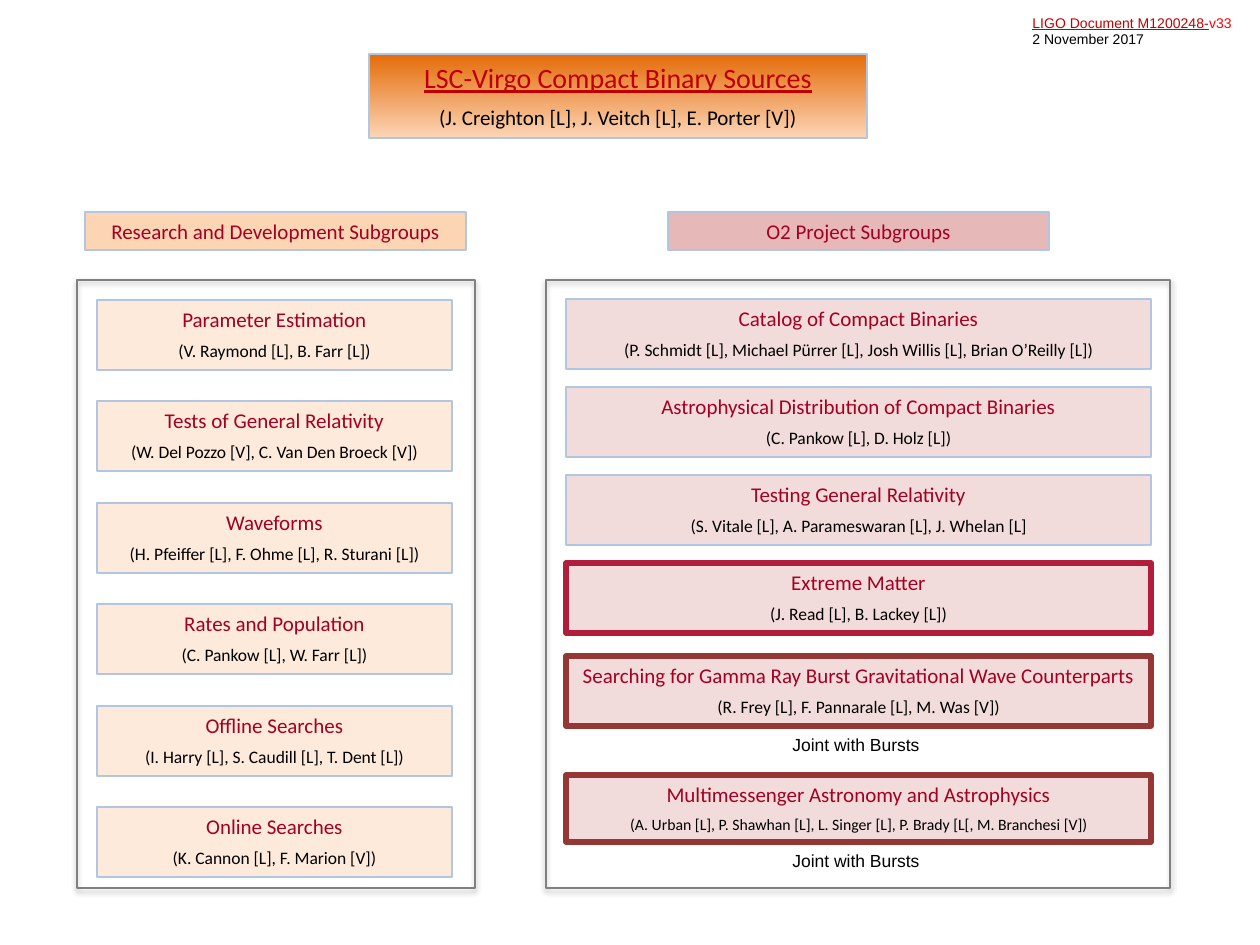
from lxml import etree
from pptx import Presentation
from pptx.dml.color import RGBColor
from pptx.enum.shapes import MSO_SHAPE
from pptx.enum.text import MSO_ANCHOR, PP_ALIGN
from pptx.oxml.ns import qn
from pptx.util import Emu, Pt

RECTANGLE = MSO_SHAPE.RECTANGLE
TOP = MSO_ANCHOR.TOP
LEFT, CENTER = PP_ALIGN.LEFT, PP_ALIGN.CENTER

BLACK = RGBColor(0x00, 0x00, 0x00)
GRAY = RGBColor(0x80, 0x80, 0x80)
RED = RGBColor(0xFF, 0x00, 0x00)
DARK_RED = RGBColor(0xC0, 0x00, 0x00)
CRIMSON = RGBColor(0xA5, 0x00, 0x21)
PALE_BLUE = RGBColor(0xB0, 0xC6, 0xE1)
ORANGE = RGBColor(0xE4, 0x6C, 0x0A)
PEACH = RGBColor(0xFC, 0xD5, 0xB5)
PALE_PEACH = RGBColor(0xFD, 0xEA, 0xDA)
ROSE = RGBColor(0xE6, 0xB9, 0xB8)
PALE_ROSE = RGBColor(0xF2, 0xDC, 0xDB)
MATTER_EDGE = RGBColor(0xB0, 0x1E, 0x3B)
JOINT_EDGE = RGBColor(0x95, 0x37, 0x35)

PX = 914400 / 126

RESEARCH_GROUPS = [
    ("Parameter Estimation", "(V. Raymond [L], B. Farr [L])"),
    ("Tests of General Relativity", "(W. Del Pozzo [V], C. Van Den Broeck [V])"),
    ("Waveforms", "(H. Pfeiffer [L], F. Ohme [L], R. Sturani [L])"),
    ("Rates and Population", "(C. Pankow [L], W. Farr [L])"),
    ("Offline Searches", "(I. Harry [L], S. Caudill [L], T. Dent [L])"),
    ("Online Searches", "(K. Cannon [L], F. Marion [V])"),
]

# Offset in the panel, height, name, chairs, size of the chairs, edge colour, edge width
PROJECT_GROUPS = [
    (19, 70, "Catalog of Compact Binaries",
     "(P. Schmidt [L], Michael Pürrer [L], Josh Willis [L], Brian O’Reilly [L])", 10, PALE_BLUE, 1),
    (107, 70, "Astrophysical Distribution of Compact Binaries",
     "(C. Pankow [L], D. Holz [L])", 10, PALE_BLUE, 1),
    (195, 70, "Testing General Relativity",
     "(S. Vitale [L], A. Parameswaran [L], J. Whelan [L]", 10, PALE_BLUE, 1),
    (283, 70, "Extreme Matter",
     "(J. Read [L], B. Lackey [L])", 10, MATTER_EDGE, 3),
    (376, 70, "Searching for Gamma Ray Burst Gravitational Wave Counterparts",
     "(R. Frey [L], F. Pannarale [L], M. Was [V])", 10, JOINT_EDGE, 3),
    (495, 67, "Multimessenger Astronomy and Astrophysics",
     "(A. Urban [L], P. Shawhan [L], L. Singer [L], P. Brady [L[, M. Branchesi [V])", 9, JOINT_EDGE, 3),
]


def emu(box):
    return [Emu(round(length * PX)) for length in box]


def add_rectangle(page, box, edge, edge_width):
    shape = page.shapes.add_shape(RECTANGLE, *emu(box))
    shape.shadow.inherit = False
    shape.line.color.rgb = edge
    shape.line.width = Pt(edge_width)
    return shape


def write_line(para, text, size, color, font="Calibri", align=CENTER):
    para.text = text
    para.alignment = align
    para.font.name = font
    para.font.size = Pt(size)
    para.font.color.rgb = color


def add_card(page, box, lines, fill, edge=PALE_BLUE, edge_width=1):
    """Add a filled box with lines of (text, size, colour), and return it."""
    card = add_rectangle(page, box, edge, edge_width)
    card.fill.solid()
    card.fill.fore_color.rgb = fill
    frame = card.text_frame
    frame.word_wrap = True
    frame.vertical_anchor = TOP
    for index, (text, size, color) in enumerate(lines):
        para = frame.add_paragraph() if index else frame.paragraphs[0]
        write_line(para, text, size, color)
        if index:
            para.space_before = Pt(size / 2)
    return card


def add_text_box(page, box):
    frame = page.shapes.add_textbox(*emu(box)).text_frame
    frame.word_wrap = False
    return frame


def add_panel(page, box):
    """Add an unfilled frame with a soft shadow below it."""
    panel = add_rectangle(page, box, GRAY, 1)
    panel.fill.background()
    effects = panel._element.spPr.find(qn("a:effectLst"))
    shadow = etree.SubElement(effects, qn("a:outerShdw"), blurRad=str(Pt(3.1)),
                              dist=str(Pt(1.8)), dir="5400000", rotWithShape="0")
    color = etree.SubElement(shadow, qn("a:srgbClr"), val=str(BLACK))
    etree.SubElement(color, qn("a:alpha"), val="35000")


def add_document_label(page, box):
    frame = add_text_box(page, box)
    number, date = frame.paragraphs[0], frame.add_paragraph()
    write_line(number, "LIGO Document M1200248-", 8, DARK_RED, "Arial", LEFT)
    number.runs[0].font.underline = True
    version = number.add_run()
    version.text = "v33"
    version.font.color.rgb = RED
    write_line(date, "2 November 2017", 8, BLACK, "Arial", LEFT)


def add_title(page, box):
    lines = [("LSC-Virgo Compact Binary Sources", 16, DARK_RED),
             ("(J. Creighton [L], J. Veitch [L], E. Porter [V])", 12, BLACK)]
    title = add_card(page, box, lines, PEACH)
    title.text_frame.paragraphs[0].font.underline = True
    title.fill.gradient()
    title.fill.gradient_angle = 270
    for stop, position, color in zip(title.fill.gradient_stops, (0, 1), (ORANGE, PEACH)):
        stop.position = position
        stop.color.rgb = color


def add_heading(page, box, text, fill):
    add_card(page, box, [(text, 12, CRIMSON)], fill)


def add_research_groups(page, box):
    left, top, width, height = box
    add_panel(page, box)
    card_height, margin = 70, 20
    step = (height - margin - card_height - 11) / (len(RESEARCH_GROUPS) - 1)
    for row, (name, chairs) in enumerate(RESEARCH_GROUPS):
        card_box = (left + margin, top + margin + round(row * step), width - 43, card_height)
        add_card(page, card_box, [(name, 12, CRIMSON), (chairs, 10, BLACK)], PALE_PEACH)


def add_project_groups(page, box):
    left, top, width, _ = box
    add_panel(page, box)
    for offset, height, name, chairs, size, edge, edge_width in PROJECT_GROUPS:
        card_box = (left + 20, top + offset, width - 39, height)
        lines = [(name, 12, CRIMSON), (chairs, size, BLACK)]
        add_card(page, card_box, lines, PALE_ROSE, edge, edge_width)
        if edge == JOINT_EDGE:
            note = add_text_box(page, (left + 234, top + offset + height + 2, 159, 34))
            write_line(note.paragraphs[0], "Joint with Bursts", 10, BLACK, "Arial", LEFT)


def main():
    deck = Presentation()
    deck.slide_width, deck.slide_height = emu((1260, 945))
    page = deck.slides.add_slide(deck.slide_layouts[6])
    add_document_label(page, (1020, 8, 232, 46))
    add_title(page, (369, 54, 498, 84))
    add_heading(page, (85, 212, 381, 38), "Research and Development Subgroups", PEACH)
    add_heading(page, (668, 212, 381, 38), "O2 Project Subgroups", ROSE)
    add_research_groups(page, (77, 280, 398, 608))
    add_project_groups(page, (546, 280, 624, 608))
    deck.save("out.pptx")


if __name__ == "__main__":
    main()
